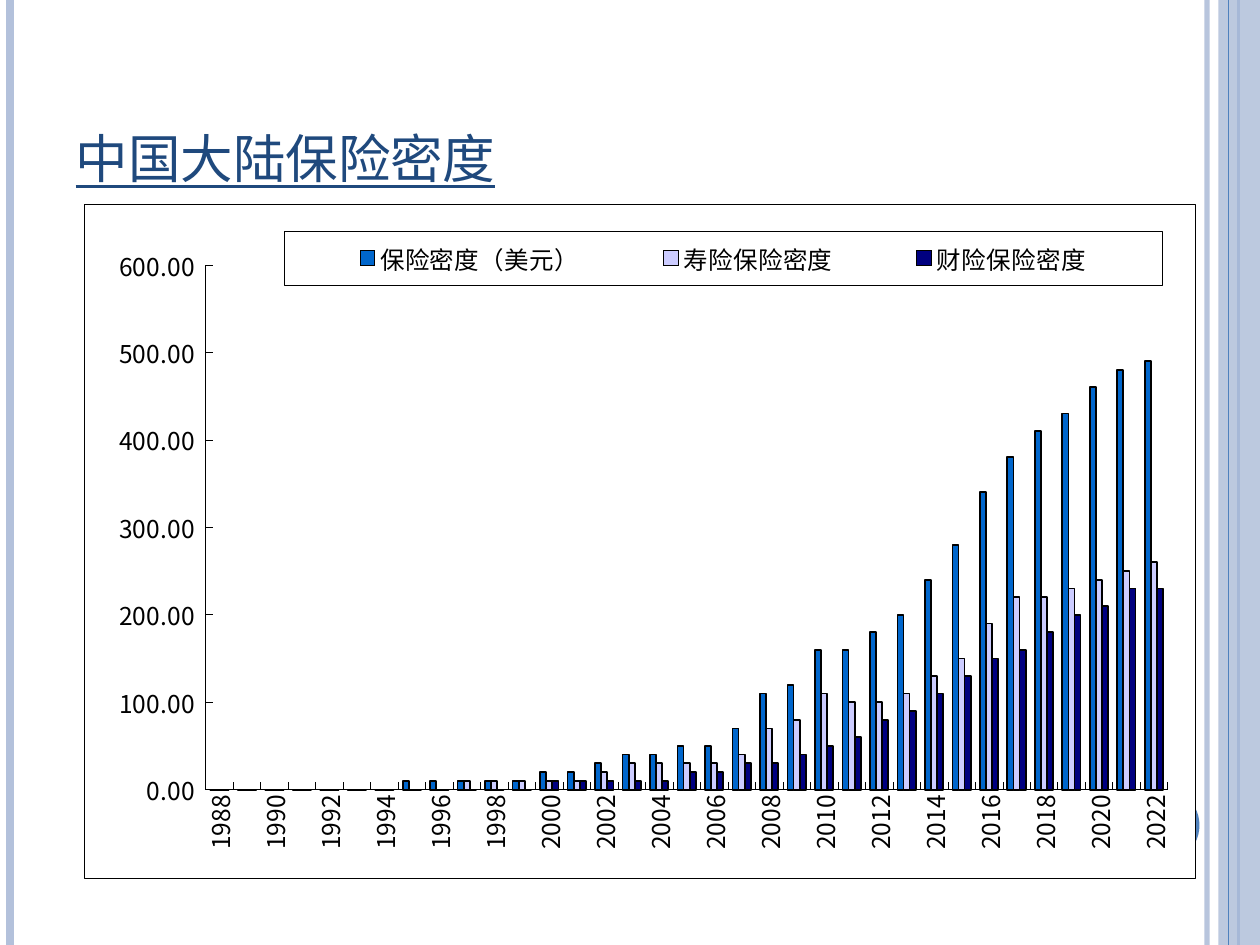
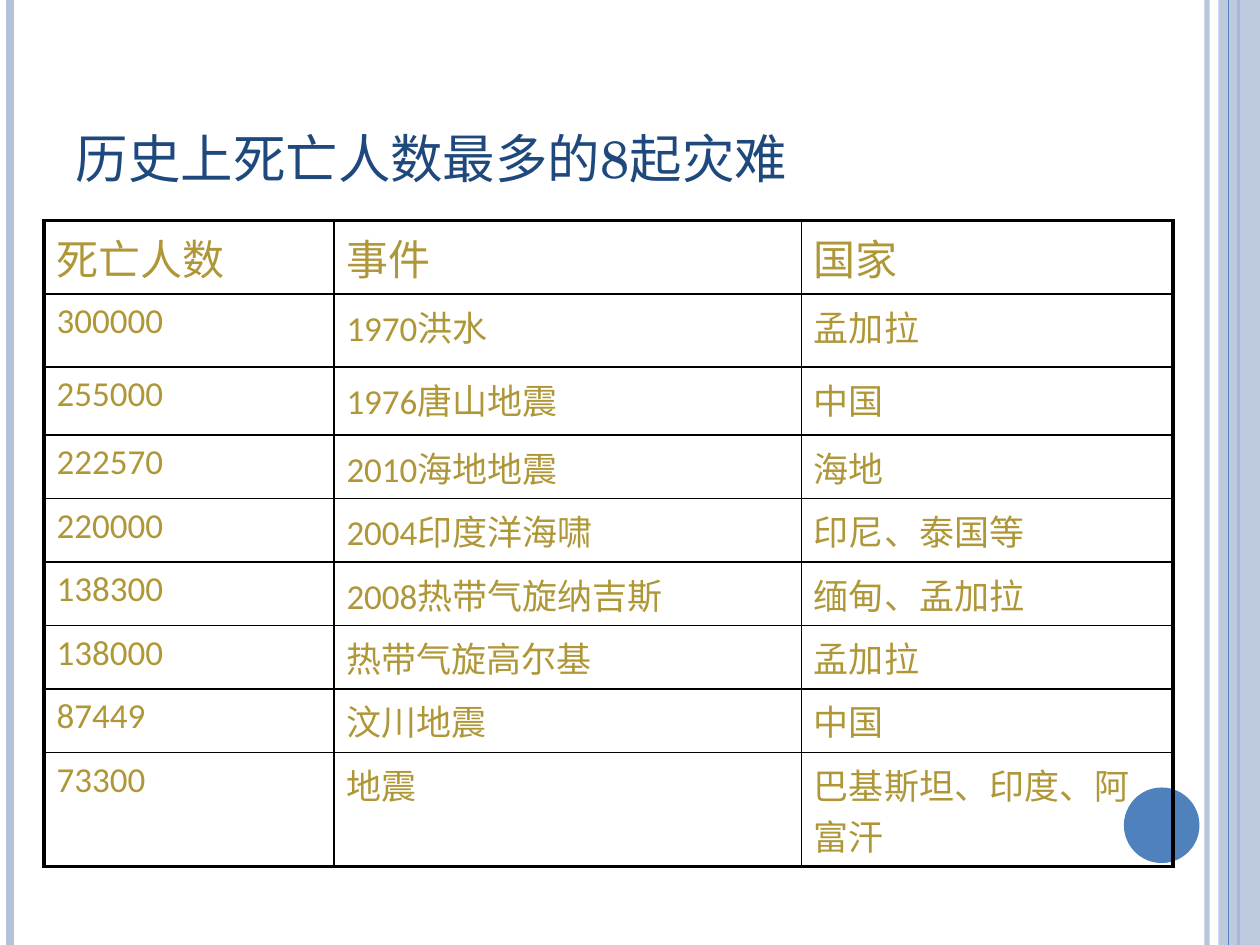
from dataclasses import dataclass

from lxml import etree
from pptx import Presentation
from pptx import util as u
from pptx.chart.data import CategoryChartData
from pptx.dml.color import RGBColor
from pptx.enum import chart as ch, shapes, text
from pptx.oxml import parse_xml
from pptx.oxml.ns import nsdecls, qn

Inches, Pt = u.Inches, u.Pt

COLORS = {
    "band": "B3C1DB", "accent": "4F81BD", "title": "1F497D", "gold": "AF9738",
    "black": "000000", "white": "FFFFFF",
    "total": "0066CC", "life": "CCCCFF", "property": "000080",
}
TITLE_FONT, BODY_FONT, CJK_FONT = "TeX Gyre Schola", "Calibri", "Noto Sans CJK SC"


@dataclass(frozen=True)
class Rule:
    x: float
    color: str
    width: float
    opacity: int = 100


@dataclass(frozen=True)
class Series:
    name: str
    color: str
    values: tuple


RULES_BELOW = (
    Rule(9.58, "band", 3, 93),
    Rule(0.08, "band", 4.5),
    Rule(9.83, "accent", 1.5),
)
RULE_ABOVE = Rule(9.75, "accent", 0.75)

YEARS = range(1988, 2023)
DENSITY = (
    Series("保险密度（美元）", "total", (
        0, 0, 0, 0, 0, 0, 0, 10, 10, 10, 10, 10, 20, 20, 30, 40, 40, 50, 50, 70, 110, 120,
        160, 160, 180, 200, 240, 280, 340, 380, 410, 430, 460, 480, 490)),
    Series("寿险保险密度", "life", (
        0, 0, 0, 0, 0, 0, 0, 0, 0, 10, 10, 10, 10, 10, 20, 30, 30, 30, 30, 40, 70, 80,
        110, 100, 100, 110, 130, 150, 190, 220, 220, 230, 240, 250, 260)),
    Series("财险保险密度", "property", (
        0, 0, 0, 0, 0, 0, 0, 0, 0, 0, 0, 0, 10, 10, 10, 10, 10, 20, 20, 30, 30, 40,
        50, 60, 80, 90, 110, 130, 150, 160, 180, 200, 210, 230, 230)),
)

DISASTERS = (
    ("死亡人数", "事件", "国家"),
    ("300000", "1970洪水", "孟加拉"),
    ("255000", "1976唐山地震", "中国"),
    ("222570", "2010海地地震", "海地"),
    ("220000", "2004印度洋海啸", "印尼、泰国等"),
    ("138300", "2008热带气旋纳吉斯", "缅甸、孟加拉"),
    ("138000", "热带气旋高尔基", "孟加拉"),
    ("87449", "汶川地震", "中国"),
    ("73300", "地震", "巴基斯坦、印度、阿富汗"),
)
COLUMN_WIDTHS = (2.3, 3.71, 2.95)
ROW_HEIGHTS = (0.58, 0.58, 0.54, 0.5, 0.5, 0.5, 0.5, 0.5, 0.9)


def rgb(name: str) -> RGBColor:
    return RGBColor.from_string(COLORS[name])


def set_opacity(element, percent: int) -> None:
    color = next(element.iter(qn("a:srgbClr")))
    etree.SubElement(color, qn("a:alpha"), val=str(percent * 1000))


def style_paragraph(p, font: str, size: float, color: str) -> None:
    p.font.name, p.font.size = font, Pt(size)
    p.font.color.rgb = rgb(color)
    props = p._p.get_or_add_pPr().find(qn("a:defRPr"))
    latin = props.find(qn("a:latin"))
    latin.addnext(parse_xml(f'<a:ea {nsdecls("a")} typeface="{CJK_FONT}"/>'))


def add_rule(s, rule: Rule) -> None:
    x = Inches(rule.x)
    line = s.shapes.add_connector(shapes.MSO_CONNECTOR.STRAIGHT, x, 0, x, Inches(7.5))
    line.line.color.rgb = rgb(rule.color)
    line.line.width = Pt(rule.width)
    props = line.element.spPr
    if rule.opacity < 100:
        set_opacity(props, rule.opacity)
    etree.SubElement(props, qn("a:effectLst"))


def add_solid(s, kind, x: float, y: float, w: float, h: float, color: str):
    sp = s.shapes.add_shape(kind, Inches(x), Inches(y), Inches(w), Inches(h))
    sp.shadow.inherit = False
    sp.fill.solid()
    sp.fill.fore_color.rgb = rgb(color)
    sp.line.fill.background()
    return sp


def add_slide(prs, title: str, underline: bool = False):
    """Add a slide with the side bands, the corner dot and a title."""
    s = prs.slides.add_slide(prs.slide_layouts[5])
    for rule in RULES_BELOW:
        add_rule(s, rule)
    band = add_solid(s, shapes.MSO_SHAPE.RECTANGLE, 9.67, 0, 0.33, 7.5, "band")
    set_opacity(band.element.spPr, 87)
    add_rule(s, RULE_ABOVE)
    add_solid(s, shapes.MSO_SHAPE.OVAL, 8.92, 6.25, 0.6, 0.6, "accent")

    sp = s.shapes.title
    sp.left, sp.top, sp.width, sp.height = map(Inches, (0.5, 0.3, 8.17, 1.25))
    tf = sp.text_frame
    tf.text = title
    tf.vertical_anchor = text.MSO_ANCHOR.BOTTOM
    p = tf.paragraphs[0]
    p.alignment = text.PP_ALIGN.LEFT
    style_paragraph(p, TITLE_FONT, 30, "title")
    if underline:
        p.font.underline = True
    return s


def set_layout(parent, index: int, x: float, y: float, w: float, h: float,
               inner: bool = False) -> None:
    """Fix a chart part at fractions of the chart area."""
    for old in parent.findall(qn("c:layout")):
        parent.remove(old)
    target = '<c:layoutTarget val="inner"/>' if inner else ""
    sizes = "".join(f'<c:{tag} val="{value}"/>' for tag, value in zip("xywh", (x, y, w, h)))
    parent.insert(index, parse_xml(
        f'<c:layout {nsdecls("c")}><c:manualLayout>{target}<c:xMode val="edge"/>'
        f'<c:yMode val="edge"/>{sizes}</c:manualLayout></c:layout>'))


def framed_white():
    return parse_xml(
        f'<c:spPr {nsdecls("c", "a")}><a:solidFill><a:srgbClr val="{COLORS["white"]}"/>'
        f'</a:solidFill><a:ln w="{Pt(0.25)}"><a:solidFill><a:srgbClr val="{COLORS["black"]}"/>'
        '</a:solidFill></a:ln></c:spPr>')


def style_axis(axis) -> None:
    axis.has_major_gridlines = False
    axis.major_tick_mark = ch.XL_TICK_MARK.INSIDE
    axis.minor_tick_mark = ch.XL_TICK_MARK.NONE
    axis.format.line.color.rgb = rgb("black")
    axis.format.line.width = Pt(0.25)
    font = axis.tick_labels.font
    font.name, font.size = CJK_FONT, Pt(14)
    font.color.rgb = rgb("black")


def add_density_chart(s) -> None:
    data = CategoryChartData()
    data.categories = [str(year) for year in YEARS]
    for series in DENSITY:
        data.add_series(series.name, series.values)
    chart = s.shapes.add_chart(
        ch.XL_CHART_TYPE.COLUMN_CLUSTERED,
        Inches(0.67), Inches(1.62), Inches(8.82), Inches(5.35), data).chart
    chart.has_title = False
    chart.font.name, chart.font.size = CJK_FONT, Pt(14)
    chart.font.color.rgb = rgb("black")

    plot = chart.plots[0]
    plot.gap_width, plot.overlap = 150, 0
    plot.vary_by_categories = False
    for column, series in zip(plot.series, DENSITY):
        column.format.fill.solid()
        column.format.fill.fore_color.rgb = rgb(series.color)
        column.format.line.color.rgb = rgb("black")
        column.format.line.width = Pt(1)

    years, values = chart.category_axis, chart.value_axis
    style_axis(years)
    style_axis(values)
    values.minimum_scale, values.maximum_scale, values.major_unit = 0, 600, 100
    values.tick_labels.number_format = "#,##0.00_ "
    values.tick_labels.number_format_is_linked = False
    axis = years._element
    axis.find(qn("c:txPr")).find(qn("a:bodyPr")).set("rot", "-5400000")
    axis.find(qn("c:noMultiLvlLbl")).addprevious(
        parse_xml(f'<c:tickLblSkip {nsdecls("c")} val="2"/>'))

    chart.has_legend = True
    legend = chart.legend
    legend.position = ch.XL_LEGEND_POSITION.RIGHT
    legend.include_in_layout = False
    box = legend._element
    set_layout(box, 1, 0.18, 0.04, 0.79, 0.08)
    box.find(qn("c:overlay")).addnext(framed_white())

    space = chart.element
    chart_node = space.find(qn("c:chart"))
    set_layout(chart_node.find(qn("c:plotArea")), 0, 0.109, 0.09, 0.866, 0.779, inner=True)
    chart_node.addnext(framed_white())


def set_borders(cell, widths: dict) -> None:
    props = cell._tc.get_or_add_tcPr()
    for side, width in widths.items():
        props.append(parse_xml(
            f'<a:ln{side} {nsdecls("a")} w="{Pt(width)}"><a:solidFill>'
            f'<a:srgbClr val="{COLORS["black"]}"/></a:solidFill></a:ln{side}>'))


def add_disaster_table(s) -> None:
    rows, cols = len(DISASTERS), len(COLUMN_WIDTHS)
    table = s.shapes.add_table(
        rows, cols, Inches(0.35), Inches(1.75),
        Inches(sum(COLUMN_WIDTHS)), Inches(sum(ROW_HEIGHTS))).table
    table.first_row = table.horz_banding = False
    for column, width in zip(table.columns, COLUMN_WIDTHS):
        column.width = Inches(width)
    for r, (height, entries) in enumerate(zip(ROW_HEIGHTS, DISASTERS)):
        table.rows[r].height = Inches(height)
        for c, entry in enumerate(entries):
            cell = table.cell(r, c)
            cell.text = entry
            style_paragraph(cell.text_frame.paragraphs[0], BODY_FONT, 20 if r else 24, "gold")
            outer = {"L": c == 0, "R": c == cols - 1, "T": r == 0, "B": r == rows - 1}
            set_borders(cell, {side: 2.25 if edge else 1 for side, edge in outer.items()})
            cell.fill.background()


def main() -> None:
    prs = Presentation()
    prs.slide_width, prs.slide_height = Inches(10), Inches(7.5)
    add_density_chart(add_slide(prs, "中国大陆保险密度", underline=True))
    add_disaster_table(add_slide(prs, "历史上死亡人数最多的8起灾难"))
    prs.save("out.pptx")


if __name__ == "__main__":
    main()
